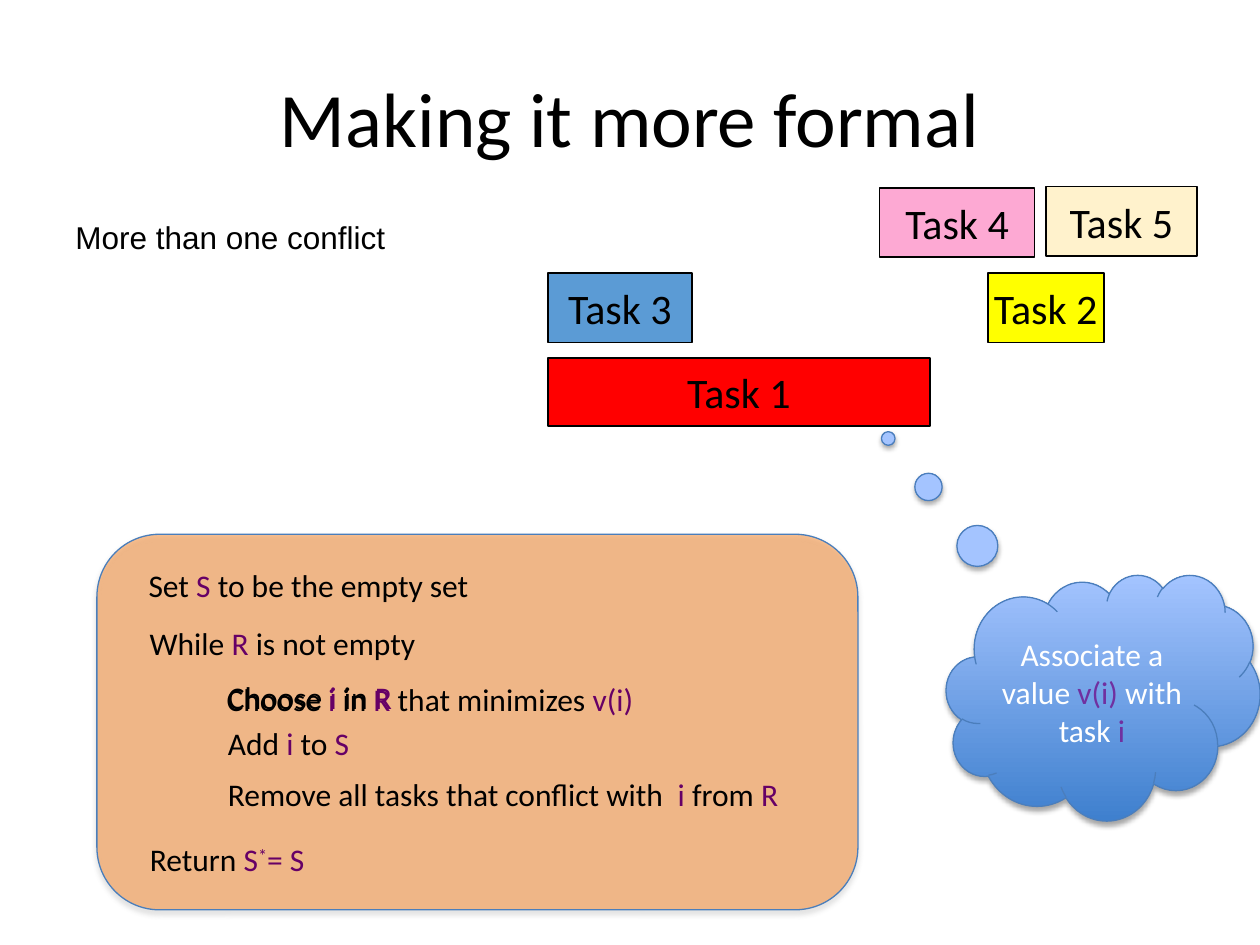
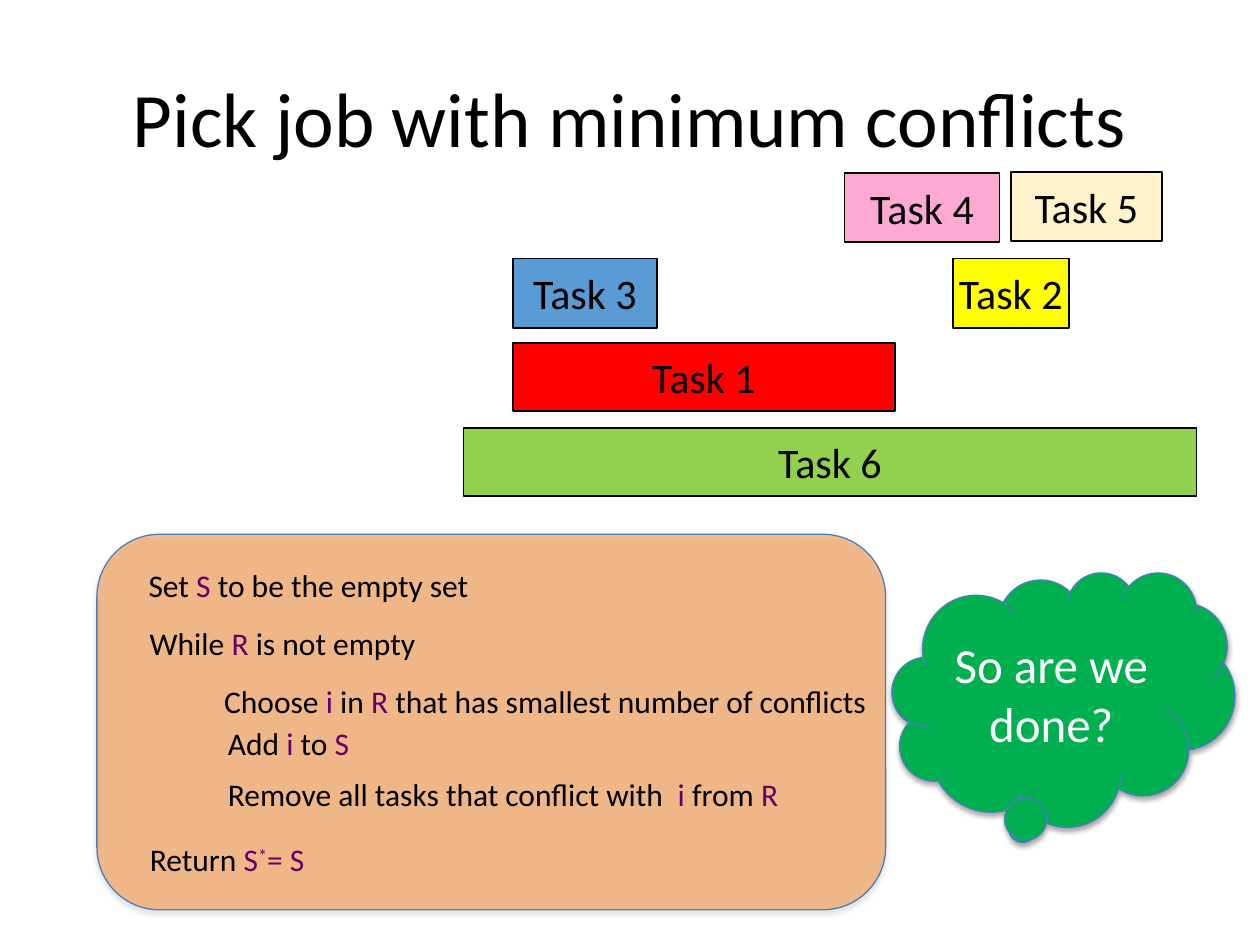
"""Builds two slides on greedy task scheduling."""
import pptx
import pptx.dml.color
import pptx.enum.shapes
import pptx.enum.text
import pptx.oxml
import pptx.oxml.ns
import pptx.util

Pt = pptx.util.Pt
SHAPE = pptx.enum.shapes.MSO_SHAPE
ALIGN = pptx.enum.text.PP_ALIGN
MIDDLE = pptx.enum.text.MSO_ANCHOR.MIDDLE
NS = pptx.oxml.ns.nsdecls("a")
COLORS = {
    "text": "000000", "variable": "660066", "white": "FFFFFF", "violet": "7030A0",
    "panel": "F79646", "panel_line": "4A7EBB", "panel_shadow": "808080",
    "cloud_line": "4B7EBC", "cloud_low": "3F80CE", "cloud_high": "A4C4FF",
    "green": "00B050", "task1": "FF0000", "task2": "FFFF00", "task3": "5B9BD5",
    "task4": "FDA9D3", "task5": "FFF2CC", "task6": "92D050",
}
TASKS = {
    1: (313.2, 204.5, 218.2, 38.9),
    2: (564.5, 156.2, 66.2, 39.6),
    3: (313.2, 156.2, 82.1, 39.6),
    4: (502.6, 107.3, 88.6, 39.6),
    5: (597.6, 106.6, 86.4, 39.6),
    6: (284.8, 253.2, 419, 38.9),
}
STEPS = [
    ("Set |S| to be the empty set", 77.8, 319.7, 199.4),
    ("While |R| is not empty", 78.5, 352.8, 167.8),
    ("Add |i| to |S", 123.1, 410.4, 85),
    ("Remove all tasks that conflict with  |i| from |R", 123.1, 439.2, 332.6),
    ("Return |S||*||= S", 78.5, 476.6, 104.4),
]


def rgb(name):
    """Return the named colour."""
    return pptx.dml.color.RGBColor.from_string(COLORS[name])


def apply(target, values):
    """Set each attribute of target from a dict."""
    for name, value in values.items():
        setattr(target, name, value)


class Deck:
    """Holds the style and the current slide."""

    def __init__(self):
        """Start an empty presentation."""
        self.prs = pptx.Presentation()
        apply(self.prs, {"slide_width": Pt(720), "slide_height": Pt(540)})
        self.s = None

    def add_text(self, sp, text, size=18, font="Calibri", color="text",
                 accent="variable", align=ALIGN.LEFT, **frame):
        """Add text in which every second part between bars is accented."""
        tf = sp.text_frame
        apply(tf, frame)
        p = tf.paragraphs[0]
        p.alignment = align
        for i, part in enumerate(text.split("|")):
            if not part:
                continue
            r = p.add_run()
            r.text = part
            apply(r.font, {"name": font, "size": Pt(size)})
            r.font.color.rgb = rgb(accent if i % 2 else color)
            if part == "*":
                r.font._element.set("baseline", "30000")

    def slide(self, title):
        """Add a slide with its title."""
        self.s = self.prs.slides.add_slide(self.prs.slide_layouts[5])
        sp = self.s.shapes.title
        apply(sp, {"left": Pt(36), "top": Pt(21.6), "width": Pt(648), "height": Pt(90)})
        self.add_text(sp, title, 44, align=ALIGN.CENTER, vertical_anchor=MIDDLE)

    def label(self, text, x, y, w, **style):
        """Add one line of text."""
        sp = self.s.shapes.add_textbox(Pt(x), Pt(y), Pt(w), Pt(29))
        self.add_text(sp, text, word_wrap=False, **style)

    def shape(self, kind, box, fill, line, weight=0.75, shadow=None):
        """Add a preset shape with its fill, line and optional shadow."""
        sp = self.s.shapes.add_shape(kind, *map(Pt, box))
        if isinstance(fill, tuple):
            sp.fill.gradient()
            sp.fill.gradient_angle = 90
            for stop, name in zip(sp.fill.gradient_stops, fill):
                stop.color.rgb = rgb(name)
        else:
            sp.fill.solid()
            sp.fill.fore_color.rgb = rgb(fill)
        sp.line.color.rgb = rgb(line)
        sp.line.width = Pt(weight)
        sp.shadow.inherit = False
        if shadow:
            effects = sp._element.spPr.find(pptx.oxml.ns.qn("a:effectLst"))
            effects.append(pptx.oxml.parse_xml(
                f'<a:outerShdw {NS} blurRad="{Pt(3.1)}" dist="{Pt(1.8)}" dir="5400000" '
                f'rotWithShape="0"><a:srgbClr val="{COLORS[shadow]}">'
                '<a:alpha val="35000"/></a:srgbClr></a:outerShdw>'))
        return sp

    def tasks(self, numbers, dx=0, dy=0):
        """Add the task bars, moved by an offset."""
        for n in numbers:
            x, y, w, h = TASKS[n]
            sp = self.shape(SHAPE.RECTANGLE, (x + dx, y + dy, w, h), f"task{n}", "text", 1)
            self.add_text(sp, f"Task {n}", 24, align=ALIGN.CENTER,
                          vertical_anchor=MIDDLE, word_wrap=False)

    def algorithm(self, width, choices):
        """Add the algorithm panel with its steps."""
        sp = self.shape(SHAPE.ROUNDED_RECTANGLE, (55.4, 305.3, width, 214.6),
                        "panel", "panel_line", shadow="panel_shadow")
        sp.adjustments[0] = 0.167
        color = sp._element.spPr.find(
            pptx.oxml.ns.qn("a:solidFill")).find(pptx.oxml.ns.qn("a:srgbClr"))
        color.append(pptx.oxml.parse_xml(f'<a:alpha {NS} val="59000"/>'))
        for step in STEPS + choices:
            self.label(*step)

    def cloud(self, text, box, fill, tail, size):
        """Add a thought cloud."""
        sp = self.shape(SHAPE.CLOUD_CALLOUT, box, fill, "cloud_line", shadow="text")
        for i, value in enumerate(tail):
            sp.adjustments[i] = value
        self.add_text(sp, text, size, color="white", accent="violet", align=ALIGN.CENTER,
                      vertical_anchor=MIDDLE, word_wrap=True)


def main():
    """Build both slides and save them."""
    deck = Deck()

    deck.slide("Making it more formal")
    deck.tasks(range(1, 6))
    deck.algorithm(434.9, [
        ("Choose |i| in |R", 123.1, 383.8, 109.4),
        ("Choose |i| in |R |that minimizes |v(i)", 122.4, 385.2, 249.8),
    ])
    deck.label("More than one conflict", 36, 121, 193, font="Arial")
    deck.cloud("Associate a value |v(i)| with task |i", (540.7, 328.3, 179.3, 140.4),
               ("cloud_low", "cloud_high"), (-0.685, -1.054), 18)

    deck.slide("Pick job with minimum conflicts")
    deck.algorithm(450.7, [
        ("Choose |i| in |R |that has smallest number of conflicts", 121, 385.9, 385.9),
    ])
    deck.tasks(range(1, 7), -20, -8.5)
    deck.cloud("So are we done?", (509.8, 326.9, 195.8, 145.4), "green", (-0.115, 0.491), 28)

    deck.prs.save("out.pptx")


if __name__ == "__main__":
    main()
